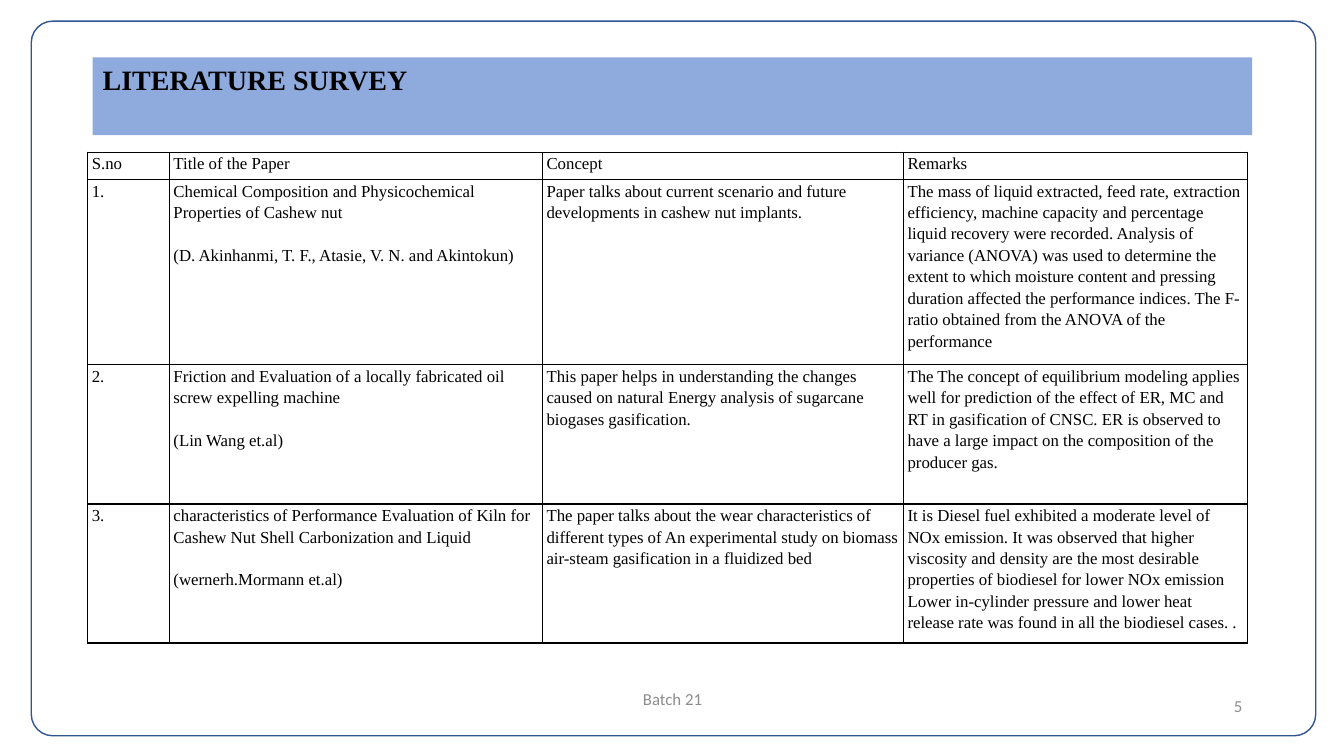
from lxml import etree
from pptx import Presentation
from pptx.dml.color import RGBColor
from pptx.enum.shapes import MSO_SHAPE
from pptx.enum.text import MSO_ANCHOR, PP_ALIGN
from pptx.oxml.ns import qn
from pptx.util import Inches, Pt

ROUND, RECT = MSO_SHAPE.ROUNDED_RECTANGLE, MSO_SHAPE.RECTANGLE
TOP, MID = MSO_ANCHOR.TOP, MSO_ANCHOR.MIDDLE
LEFT, CENTER, RIGHT = PP_ALIGN.LEFT, PP_ALIGN.CENTER, PP_ALIGN.RIGHT

theme = {
    "ink": "000000", "band": "8FAADC", "edge": "325491", "mute": "8C8C8C",
    "serif": "Times New Roman", "sans": "Calibri",
    "head": 20, "body": 12, "gap": 15.3, "lead": 1.15, "rule": 1,
}

deck = Presentation()
deck.slide_width, deck.slide_height = Inches(13.33), Inches(7.5)
slide = deck.slides.add_slide(deck.slide_layouts[6])


def share(x, y, w, h):
    wide, high = deck.slide_width / 100, deck.slide_height / 100
    return int(x * wide), int(y * high), int(w * wide), int(h * high)


def write(para, text, face, size, color, bold=False):
    run = para.add_run()
    run.text = text
    run.font.name = theme[face]
    run.font.size = Pt(theme[size])
    run.font.color.rgb = RGBColor.from_string(theme[color])
    run.font.bold = bold


frame = slide.shapes.add_shape(ROUND, *share(2.33, 2.8, 95.57, 94.53))
frame.shadow.inherit = False
frame.adjustments[0] = 0.03
frame.fill.background()
frame.line.color.rgb = RGBColor.from_string(theme["edge"])
frame.line.width = Pt(theme["rule"])

band = slide.shapes.add_shape(RECT, *share(6.9, 7.6, 86.27, 10.27))
band.shadow.inherit = False
band.fill.solid()
band.fill.fore_color.rgb = RGBColor.from_string(theme["band"])
band.line.fill.background()
band.text_frame.vertical_anchor = TOP
title = band.text_frame.paragraphs[0]
title.alignment = LEFT
write(title, "LITERATURE SURVEY", "serif", "head", "ink", True)

notes = [
    ("Batch 21", (33.16, 89.73, 33.76, 5.33), CENTER),
    ("5", (70.67, 90.67, 22.51, 5.33), RIGHT),
]
for text, area, side in notes:
    box = slide.shapes.add_textbox(*share(*area)).text_frame
    box.word_wrap = True
    box.vertical_anchor = MID
    box.paragraphs[0].alignment = side
    write(box.paragraphs[0], text, "sans", "body", "mute")

cols = [6.08, 27.76, 26.86, 25.58]
rows = [3.6, 24.53, 18.4, 18.4]
papers = [
    [["S.no"], ["Title of the Paper"], ["Concept"], ["Remarks"]],
    [
        ["1."],
        ["Chemical Composition and Physicochemical Properties of Cashew nut",
         "(D. Akinhanmi, T. F., Atasie, V. N. and Akintokun)"],
        ["Paper talks about current scenario and future developments in cashew nut implants."],
        ["The mass of liquid extracted, feed rate, extraction efficiency, machine capacity "
         "and percentage liquid recovery were recorded. Analysis of variance (ANOVA) was used "
         "to determine the extent to which moisture content and pressing duration affected the "
         "performance indices. The F-ratio obtained from the ANOVA of the performance"],
    ],
    [
        ["2."],
        ["Friction and Evaluation of a locally fabricated oil screw expelling machine",
         "(Lin Wang et.al)"],
        ["This paper helps in understanding the changes caused on natural Energy analysis of "
         "sugarcane biogases gasification."],
        ["The The concept of equilibrium modeling applies well for prediction of the effect of "
         "ER, MC and RT in gasification of CNSC. ER is observed to have a large impact on the "
         "composition of the producer gas."],
    ],
    [
        ["3."],
        ["characteristics of Performance Evaluation of Kiln for Cashew Nut Shell Carbonization "
         "and Liquid", "(wernerh.Mormann et.al)"],
        ["The paper talks about the wear characteristics of different types of An experimental "
         "study on biomass air-steam gasification in a fluidized bed"],
        ["It is Diesel fuel exhibited a moderate level of NOx emission. It was observed that "
         "higher viscosity and density are the most desirable properties of biodiesel for lower "
         "NOx emission Lower in-cylinder pressure and lower heat release rate was found in all "
         "the biodiesel cases. ."],
    ],
]

area = share(6.53, 20.13, sum(cols), sum(rows))
table = slide.shapes.add_table(len(rows), len(cols), *area).table
table.first_row = table.horz_banding = False
for col, wide in zip(table.columns, cols):
    col.width = share(0, 0, wide, 0)[2]
for row, high, paper in zip(table.rows, rows, papers):
    row.height = share(0, 0, 0, high)[3]
    for cell, parts in zip(row.cells, paper):
        cell.margin_left = cell.margin_right = Inches(0.04)
        cell.margin_top = cell.margin_bottom = 0
        cell.vertical_anchor = TOP
        props = cell._tc.get_or_add_tcPr()
        for side in ("a:lnL", "a:lnR", "a:lnT", "a:lnB"):
            line = etree.SubElement(props, qn(side), w=str(Pt(theme["rule"])))
            fill = etree.SubElement(line, qn("a:solidFill"))
            etree.SubElement(fill, qn("a:srgbClr"), val=theme["ink"])
        cell.fill.background()
        for i, part in enumerate(parts):
            para = cell.text_frame.add_paragraph() if i else cell.text_frame.paragraphs[0]
            para.line_spacing = theme["lead"]
            if i:
                para.space_before = Pt(theme["gap"])
            write(para, part, "serif", "body", "ink")

deck.save("out.pptx")
